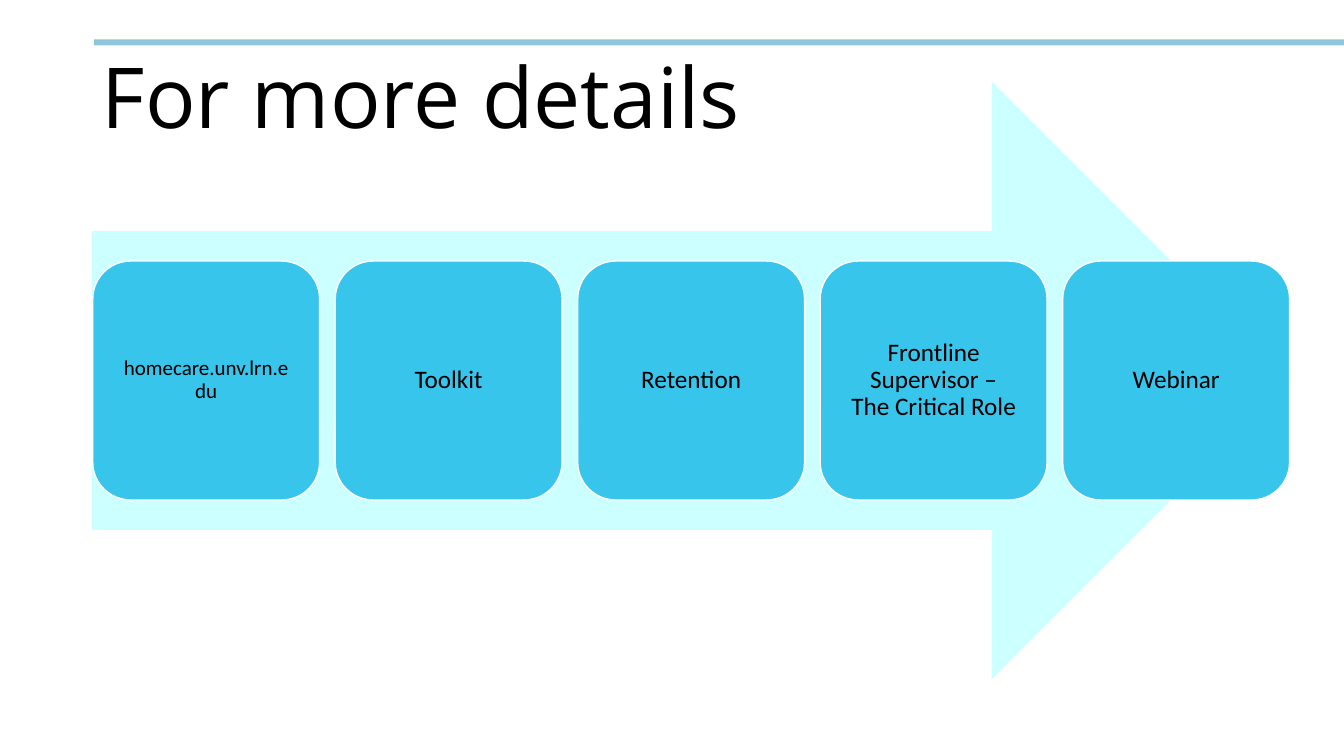
from pptx import Presentation
from pptx.dml.color import RGBColor
from pptx.enum.shapes import MSO_SHAPE as Preset
from pptx.enum.text import MSO_ANCHOR as Anchor, MSO_AUTO_SIZE as AutoSize, PP_ALIGN as Align
from pptx.util import Inches, Pt

COLOURS = {
    "rule": "8EC7D7",
    "arrow": "CCFFFF",
    "step": "38C5EC",
    "outline": "FFFFFF",
    "text": "000000",
}
STEPS = [
    ("homecare.unv.lrn.edu", 15),
    ("Toolkit", 18),
    ("Retention", 18),
    ("Frontline Supervisor – The Critical Role", 18),
    ("Webinar", 18),
]
STEP_LEFT, STEP_TOP, STEP_WIDTH, STEP_HEIGHT = 0.92, 2.59, 2.25, 2.37
STEP_PITCH = 2.405


def colour(name):
    return RGBColor.from_string(COLOURS[name])


def write(frame, text, size, font="Calibri", align=Align.CENTER,
          anchor=Anchor.MIDDLE, inset_x=0.18, inset_y=0.18):
    frame.word_wrap = True
    frame.auto_size = AutoSize.NONE
    frame.vertical_anchor = anchor
    frame.margin_left = frame.margin_right = Inches(inset_x)
    frame.margin_top = frame.margin_bottom = Inches(inset_y)
    paragraph = frame.paragraphs[0]
    paragraph.alignment = align
    paragraph.line_spacing = 0.9
    run = paragraph.add_run()
    run.text = text
    run.font.size = Pt(size)
    run.font.name = font
    run.font.color.rgb = colour("text")


def add_block(slide, preset, left, top, width, height, fill, outline=None):
    block = slide.shapes.add_shape(
        preset, Inches(left), Inches(top), Inches(width), Inches(height))
    block.shadow.inherit = False
    block.fill.solid()
    block.fill.fore_color.rgb = colour(fill)
    if outline:
        block.line.color.rgb = colour(outline)
        block.line.width = Pt(1)
    else:
        block.line.fill.background()
    return block


def add_title(slide, text):
    title = slide.shapes.title
    title.left, title.top = Inches(0.91), Inches(0.48)
    title.width, title.height = Inches(11.5), Inches(1.03)
    write(title.text_frame, text, 60, font="Open Sans", align=Align.LEFT,
          anchor=Anchor.BOTTOM, inset_x=0.1, inset_y=0.05)


def add_steps(slide):
    for index, (label, size) in enumerate(STEPS):
        step = add_block(slide, Preset.ROUNDED_RECTANGLE,
                         STEP_LEFT + index * STEP_PITCH, STEP_TOP,
                         STEP_WIDTH, STEP_HEIGHT, "step", "outline")
        write(step.text_frame, label, size)


def main():
    deck = Presentation()
    deck.slide_width, deck.slide_height = Inches(13.33), Inches(7.5)
    slide = deck.slides.add_slide(deck.slide_layouts[5])
    add_block(slide, Preset.RECTANGLE, 0.93, 0.39, 12.41, 0.06, "rule")
    add_title(slide, "For more details")
    add_block(slide, Preset.RIGHT_ARROW, 0.91, 0.81, 11.89, 5.93, "arrow")
    add_steps(slide)
    deck.save("out.pptx")


if __name__ == "__main__":
    main()
